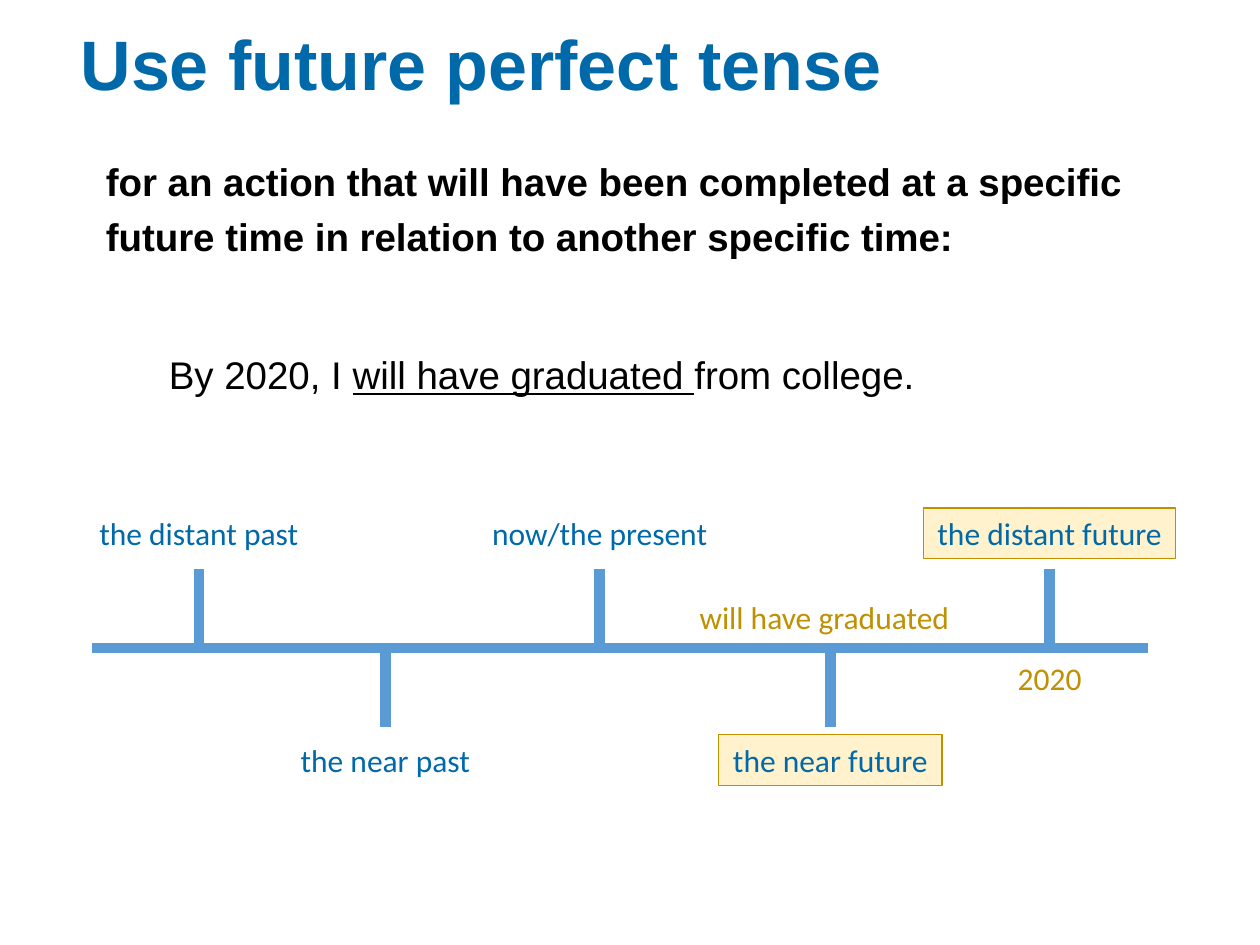
from dataclasses import dataclass

from lxml.etree import SubElement
from pptx import Presentation
from pptx.dml.color import RGBColor
from pptx.enum.shapes import MSO_CONNECTOR, MSO_SHAPE
from pptx.enum.text import MSO_ANCHOR, MSO_AUTO_SIZE, PP_ALIGN
from pptx.oxml.ns import qn
from pptx.util import Cm, Pt


@dataclass(frozen=True)
class Theme:
    heading: RGBColor = RGBColor(0x00, 0x69, 0xAA)
    body: RGBColor = RGBColor(0x00, 0x00, 0x00)
    axis: RGBColor = RGBColor(0x5B, 0x9B, 0xD5)
    accent: RGBColor = RGBColor(0xBF, 0x90, 0x00)
    highlight: RGBColor = RGBColor(0xFF, 0xF2, 0xCC)
    heading_font: str = "Arial"
    label_font: str = "Calibri"
    title_size: Pt = Pt(40)
    body_size: Pt = Pt(22)
    label_size: Pt = Pt(18)


THEME = Theme()
AXIS_LEFT, AXIS_RIGHT, AXIS_Y = 1.85, 23.14, 13.06
TICK_LENGTH = 1.59
LABEL_HEIGHT = 1.02
LABEL_TOP = {"above": 10.24, "below": 14.81}

# caption, tick position, side of the axis, label width, highlighted
PERIODS = [
    ("the distant past", 4.01, "above", 4.57, False),
    ("the near past", 7.77, "below", 3.96, False),
    ("now/the present", 12.09, "above", 4.9, False),
    ("the near future", 16.74, "below", 4.5, True),
    ("the distant future", 21.16, "above", 5.08, True),
]
# caption, centre, top, width
EVENTS = [
    ("will have graduated", 16.62, 11.94, 5.61),
    ("2020", 21.16, 13.16, 1.8),
]


def apply(target, values):
    for name, value in values.items():
        setattr(target, name, value)


def place(shape, left, top, width, height):
    apply(shape, {"left": Cm(left), "top": Cm(top),
                  "width": Cm(width), "height": Cm(height)})


def add_span(para, text, color, **font):
    span = para.add_run()
    span.text = text
    apply(span.font, font)
    span.font.color.rgb = color


def remove_bullet(para, indent):
    properties = para._p.get_or_add_pPr()
    properties.set("marL", str(Cm(indent)))
    properties.set("indent", "0")
    SubElement(properties, qn("a:buNone"))


def fill_title(title):
    place(title, 1.37, 0.74, 22.68, 1.27)
    apply(title.text_frame, {"vertical_anchor": MSO_ANCHOR.MIDDLE,
                             "auto_size": MSO_AUTO_SIZE.NONE})
    para = title.text_frame.paragraphs[0]
    apply(para, {"alignment": PP_ALIGN.LEFT, "line_spacing": 0.9})
    add_span(para, "Use future perfect tense", THEME.heading,
             name=THEME.heading_font, size=THEME.title_size, bold=True)


def fill_body(body):
    place(body, 1.88, 2.87, 21.69, 6.68)
    frame = body.text_frame
    frame.auto_size = MSO_AUTO_SIZE.NONE
    rule, example = frame.paragraphs[0], frame.add_paragraph()
    example.level = 1
    for para, indent, space in ((rule, 0, 0), (example, 1.27, 47)):
        remove_bullet(para, indent)
        apply(para, {"line_spacing": 1.2, "space_before": Pt(space)})

    font = {"name": THEME.heading_font, "size": THEME.body_size}
    add_span(rule, "for an action that will have been completed at a specific "
             "future time in relation to another specific time:",
             THEME.body, bold=True, **font)
    for text, underline in (("By 2020, I ", False),
                            ("will have graduated ", True),
                            ("from college.", False)):
        add_span(example, text, THEME.body, bold=False,
                 underline=underline, **font)


def add_line(page, start, end):
    line = page.shapes.add_connector(
        MSO_CONNECTOR.STRAIGHT, *(Cm(value) for value in (*start, *end)))
    line.line.color.rgb = THEME.axis
    line.line.width = Pt(6)
    SubElement(line._element.spPr, qn("a:effectLst"))


def add_label(page, text, center, top, width, color, highlighted=False):
    area = [Cm(value) for value in
            (center - width / 2, top, width, LABEL_HEIGHT)]
    if highlighted:
        box = page.shapes.add_shape(MSO_SHAPE.RECTANGLE, *area)
        box.shadow.inherit = False
        box.fill.solid()
        box.fill.fore_color.rgb = THEME.highlight
        box.line.color.rgb = THEME.accent
        box.line.width = Pt(0.75)
    else:
        box = page.shapes.add_textbox(*area)
    apply(box.text_frame, {"word_wrap": False,
                           "vertical_anchor": MSO_ANCHOR.TOP,
                           "auto_size": MSO_AUTO_SIZE.SHAPE_TO_FIT_TEXT})
    para = box.text_frame.paragraphs[0]
    para.alignment = PP_ALIGN.CENTER
    add_span(para, text, color, name=THEME.label_font, size=THEME.label_size)


def add_timeline(page):
    for caption, x, side, width, highlighted in PERIODS:
        tick_top = AXIS_Y - TICK_LENGTH if side == "above" else AXIS_Y
        add_line(page, (x, tick_top), (x, tick_top + TICK_LENGTH))
        add_label(page, caption, x, LABEL_TOP[side], width,
                  THEME.heading, highlighted)
    add_line(page, (AXIS_LEFT, AXIS_Y), (AXIS_RIGHT, AXIS_Y))
    for caption, center, top, width in EVENTS:
        add_label(page, caption, center, top, width, THEME.accent)


def main():
    deck = Presentation()
    apply(deck, {"slide_width": Cm(25.4), "slide_height": Cm(19.05)})
    page = deck.slides.add_slide(deck.slide_layouts[1])
    fill_title(page.shapes.title)
    fill_body(page.placeholders[1])
    add_timeline(page)
    deck.save("out.pptx")


if __name__ == "__main__":
    main()
